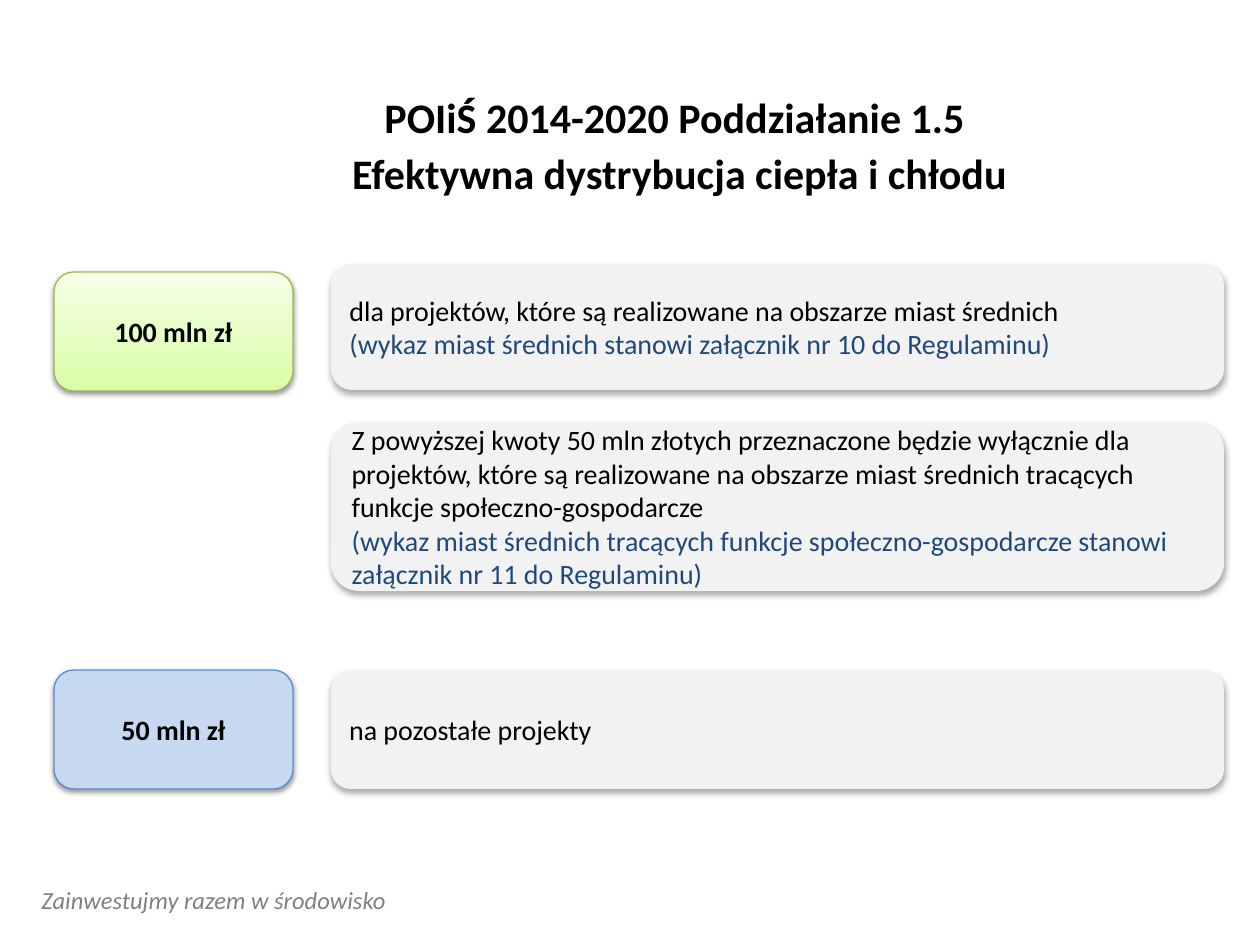
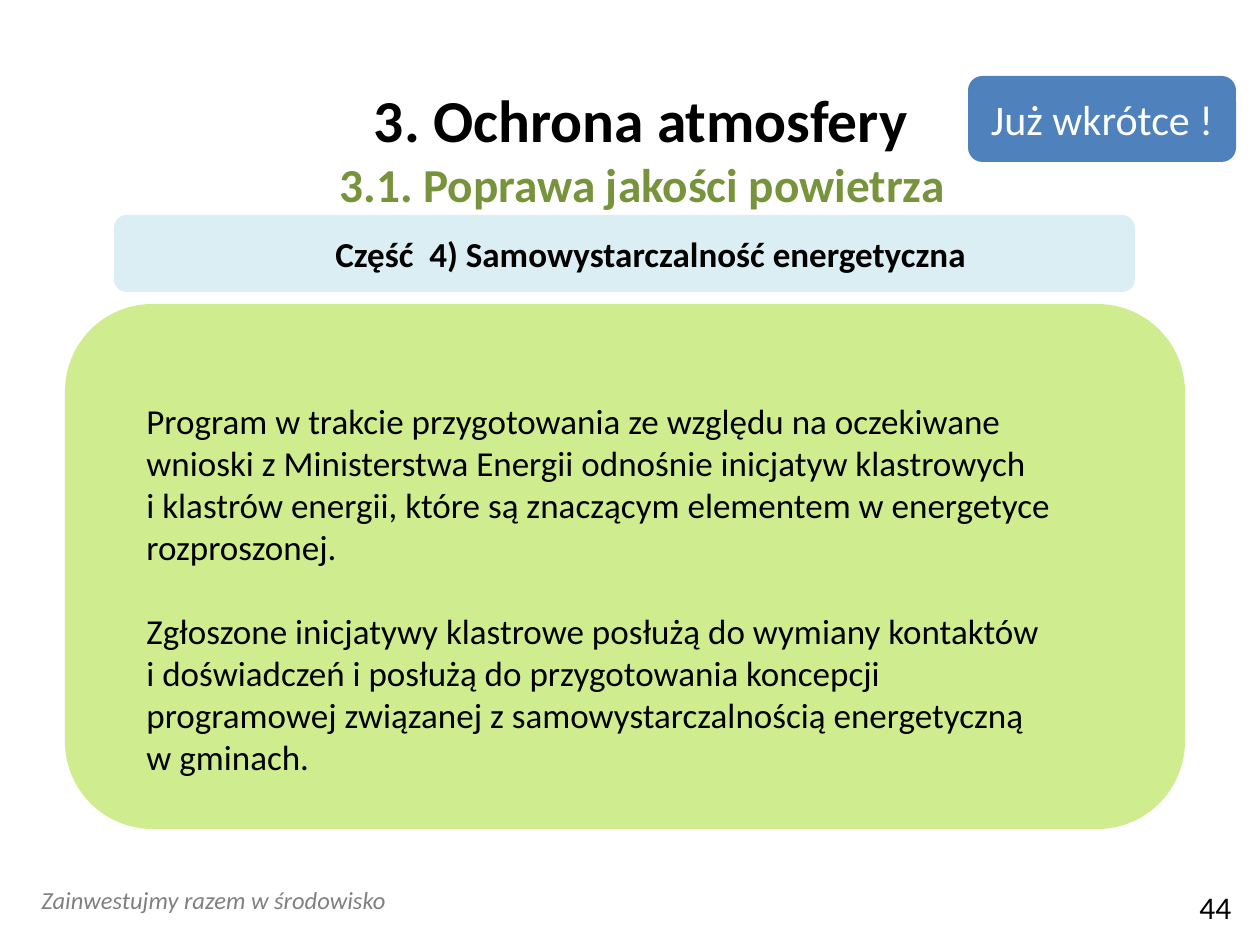
"""Builds two slides on funding for heat distribution and air quality."""
from lxml import etree
from pptx import Presentation
from pptx.dml.color import RGBColor
from pptx.enum.shapes import MSO_SHAPE
from pptx.enum.text import MSO_ANCHOR, PP_ALIGN
from pptx.oxml.ns import qn
from pptx.util import Pt

ROUNDED = MSO_SHAPE.ROUNDED_RECTANGLE
TOP, MIDDLE = MSO_ANCHOR.TOP, MSO_ANCHOR.MIDDLE
LEFT, CENTER = PP_ALIGN.LEFT, PP_ALIGN.CENTER

FONT = "Calibri"
BLACK, WHITE, GREY, NAVY, OLIVE = "000000", "FFFFFF", "808080", "1F497D", "77933C"
PANEL, SKY, LIME, BLUE = "F2F2F2", "DBEEF4", "AFE13F", "4F81BD"
PANEL_SHADOW = (32, 3.5, 2.2)
AMOUNT_SHADOW = (38, 3.1, 1.6)

FOOTER = "Zainwestujmy razem w środowisko"
HEAT_TITLE = ["POIiŚ 2014-2020 Poddziałanie 1.5 ", "Efektywna dystrybucja ciepła i chłodu"]
AMOUNTS = [
    {"top": 272, "text": "100 mln zł", "fill": ("DAFDA7", "F5FFE7"), "line": "98B955"},
    {"top": 670, "text": "50 mln zł", "fill": "C6D9F1", "line": "558ED5"},
]
PURPOSES = [
    (264, 126, "dla projektów, które są realizowane na obszarze miast średnich",
     "(wykaz miast średnich stanowi załącznik nr 10 do Regulaminu)"),
    (422, 169, "Z powyższej kwoty 50 mln złotych przeznaczone będzie wyłącznie dla projektów, "
     "które są realizowane na obszarze miast średnich tracących funkcje społeczno-gospodarcze",
     "(wykaz miast średnich tracących funkcje społeczno-gospodarcze stanowi "
     "załącznik nr 11 do Regulaminu)"),
    (670, 119, "na pozostałe projekty", None),
]

AIR_TITLE = "3. Ochrona atmosfery "
AIR_SUBTITLE = "3.1. Poprawa jakości powietrza "
PART = "Część  4) Samowystarczalność energetyczna"
SOON = "Już wkrótce !"
PROGRAMME = [
    "Program w trakcie przygotowania ze względu na oczekiwane wnioski z Ministerstwa Energii "
    "odnośnie inicjatyw klastrowych \vi klastrów energii, które są znaczącym elementem "
    "w energetyce rozproszonej.",
    "Zgłoszone inicjatywy klastrowe posłużą do wymiany kontaktów \vi doświadczeń i posłużą "
    "do przygotowania koncepcji programowej związanej z samowystarczalnością energetyczną "
    "\vw gminach.",
]
PAGE_NUMBER = "44"


def px(length):
    return round(length * 914400 / 126)


def rgb(color):
    return RGBColor.from_string(color)


def write(shape, lines, align=LEFT, anchor=TOP, bold=False, italic=False,
          wrap=True, before=0, after=0, spacing=1.0):
    """Fill a shape with (text, size, color) paragraphs."""
    frame = shape.text_frame
    frame.word_wrap = wrap
    frame.vertical_anchor = anchor
    for index, (text, size, color) in enumerate(lines):
        paragraph = frame.add_paragraph() if index else frame.paragraphs[0]
        paragraph.text = text
        paragraph.alignment = align
        paragraph.line_spacing = spacing
        paragraph.space_before = Pt(before if index else 0)
        paragraph.space_after = Pt(after)
        font = paragraph.font
        font.name, font.size, font.color.rgb = FONT, Pt(size), rgb(color)
        font.bold, font.italic = bold, italic


def add_text(slide, box, lines, **style):
    write(slide.shapes.add_textbox(*map(px, box)), lines, **style)


def add_panel(slide, box, fill, line=None, shadow=None, alpha=None):
    """Add a rounded panel with a plain or two-colour fill."""
    panel = slide.shapes.add_shape(ROUNDED, *map(px, box))
    panel.shadow.inherit = False
    if isinstance(fill, tuple):
        panel.fill.gradient()
        panel.fill.gradient_angle = 90
        for stop, color in zip(panel.fill.gradient_stops, fill):
            stop.color.rgb = rgb(color)
    else:
        panel.fill.solid()
        panel.fill.fore_color.rgb = rgb(fill)
    if line:
        panel.line.color.rgb = rgb(line)
        panel.line.width = Pt(0.75)
    else:
        panel.line.fill.background()
    properties = panel._element.spPr
    if alpha:
        color = properties.find(qn("a:solidFill")).find(qn("a:srgbClr"))
        etree.SubElement(color, qn("a:alpha"), val=str(alpha * 1000))
    if shadow:
        opacity, blur, distance = shadow
        outer = etree.SubElement(
            properties.find(qn("a:effectLst")), qn("a:outerShdw"), blurRad=str(Pt(blur)),
            dist=str(Pt(distance)), dir="5400000", rotWithShape="0")
        color = etree.SubElement(outer, qn("a:srgbClr"), val=BLACK)
        etree.SubElement(color, qn("a:alpha"), val=str(opacity * 1000))
    return panel


def add_slide(deck):
    slide = deck.slides.add_slide(deck.slide_layouts[6])
    add_text(slide, (29, 879, 532, 43), [(FOOTER, 14, GREY)], italic=True)
    return slide


def build_heat(deck):
    slide = add_slide(deck)
    add_text(slide, (69, 91, 1221, 115), [(text, 24, BLACK) for text in HEAT_TITLE],
             align=CENTER, bold=True, after=6, spacing=0.9)
    for amount in AMOUNTS:
        panel = add_panel(slide, (54, amount["top"], 239, 119), amount["fill"],
                          amount["line"], AMOUNT_SHADOW)
        write(panel, [(amount["text"], 16, BLACK)], CENTER, MIDDLE, bold=True)
    for top, height, purpose, annex in PURPOSES:
        panel = add_panel(slide, (331, top, 893, height), PANEL, shadow=PANEL_SHADOW)
        lines = [(purpose, 16, BLACK)] + ([(annex, 16, NAVY)] if annex else [])
        write(panel, lines, anchor=MIDDLE)


def build_air(deck):
    slide = add_slide(deck)
    add_panel(slide, (114, 215, 1021, 77), SKY)
    add_panel(slide, (65, 304, 1120, 525), LIME, alpha=59)
    add_text(slide, (1187, 882, 74, 37), [(PAGE_NUMBER, 18, BLACK)])
    add_text(slide, (93, 69, 1109, 157), [(AIR_TITLE, 34, BLACK), (AIR_SUBTITLE, 27, OLIVE)],
             align=CENTER, anchor=MIDDLE, bold=True)
    add_text(slide, (134, 393, 953, 394), [(text, 20, BLACK) for text in PROGRAMME], before=24)
    write(add_panel(slide, (968, 76, 268, 86), BLUE), [(SOON, 24, WHITE)], CENTER, MIDDLE)
    add_text(slide, (323, 226, 662, 55), [(PART, 20, BLACK)], bold=True, wrap=False)


def main():
    deck = Presentation()
    deck.slide_width, deck.slide_height = px(1260), px(945)
    build_heat(deck)
    build_air(deck)
    deck.save("out.pptx")


if __name__ == "__main__":
    main()
